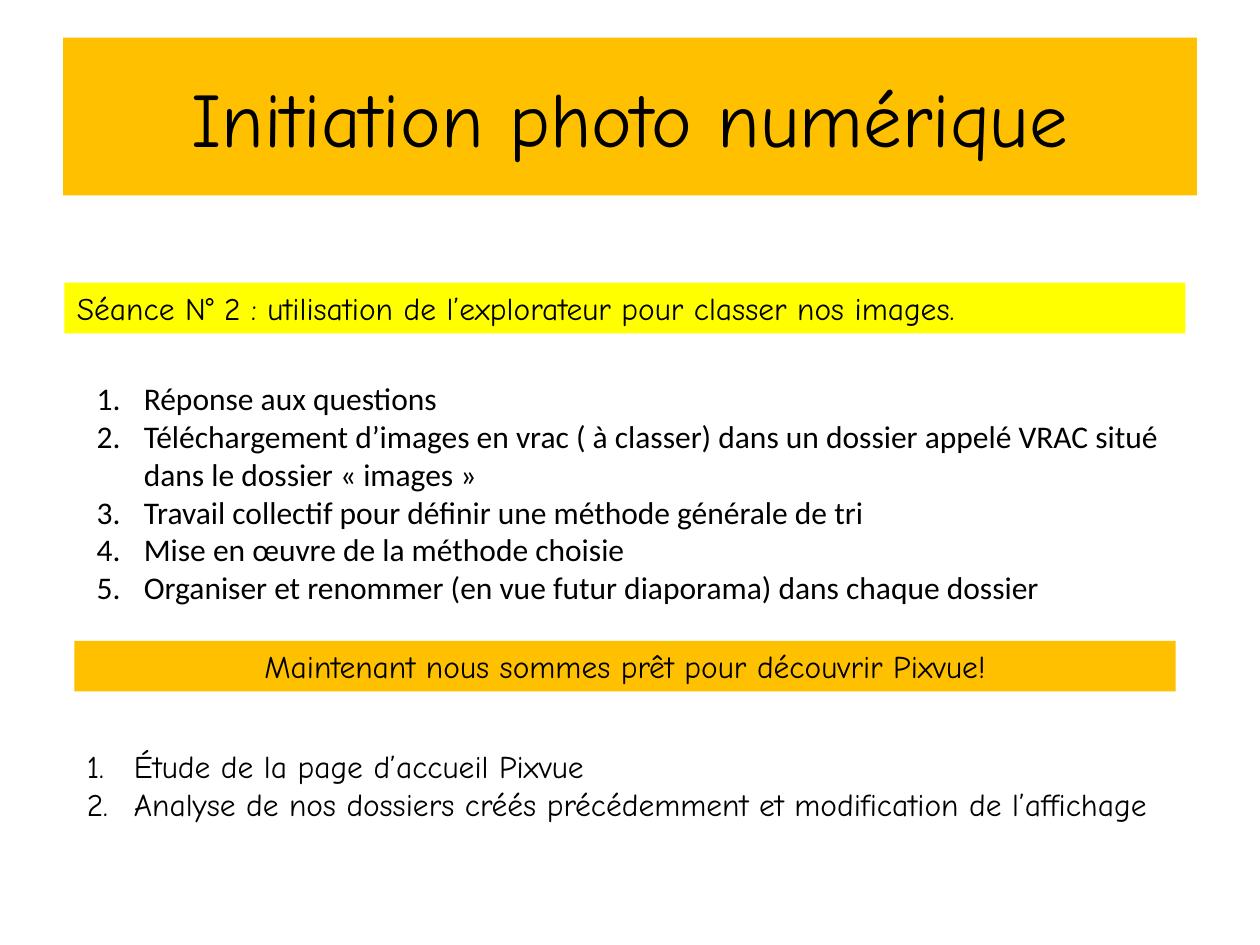
from lxml.etree import SubElement
from pptx import Presentation
from pptx.dml.color import RGBColor
from pptx.enum.shapes import MSO_SHAPE
from pptx.enum.text import MSO_ANCHOR, MSO_AUTO_SIZE, PP_ALIGN
from pptx.oxml.ns import qn
from pptx.util import Cm, Pt

TITLE = "Initiation photo numérique"
COMIC, PLAIN = "Comic Neue", "Calibri"
GOLD, YELLOW, BLACK = "FFC000", "FFFF00", "000000"
LEFT, MID = PP_ALIGN.LEFT, PP_ALIGN.CENTER
INDENT = 0.95

BANDS = [
    ("Séance N° 2 : utilisation de l’explorateur pour classer nos images.",
     (1.3, 5.7, 22.6, 1.02), YELLOW, LEFT),
    ("Maintenant nous sommes prêt pour découvrir Pixvue!",
     (1.5, 12.92, 22.2, 1.02), GOLD, MID),
]
LISTS = [
    (["Réponse aux questions",
      "Téléchargement d’images en vrac ( à classer) dans un dossier appelé VRAC "
      "situé dans le dossier « images »",
      "Travail collectif pour définir une méthode générale de tri",
      "Mise en œuvre de la méthode choisie",
      "Organiser et renommer (en vue futur diaporama) dans chaque dossier"],
     (1.7, 7.52, 22.2, 5.64), PLAIN),
    (["Étude de la page d’accueil Pixvue",
      "Analyse de nos dossiers créés précédemment et modification de l’affichage"],
     (1.5, 14.94, 22, 3.33), COMIC),
]


def color(code):
    return RGBColor.from_string(code)


def apply(item, style):
    for name, value in style.items():
        setattr(item, name, value)


def place(shape, box):
    apply(shape, dict(zip(("left", "top", "width", "height"), map(Cm, box))))


def paint(shape, code):
    shape.fill.solid()
    shape.fill.fore_color.rgb = color(code)
    shape.line.fill.background()


def write(shape, lines, font, size=18, align=LEFT, anchor=MSO_ANCHOR.TOP):
    frame = shape.text_frame
    frame.text = "\n".join(lines)
    apply(frame, {"word_wrap": True, "auto_size": MSO_AUTO_SIZE.NONE,
                  "vertical_anchor": anchor})
    for para in frame.paragraphs:
        para.alignment = align
        apply(para.font, {"name": font, "size": Pt(size)})
        para.font.color.rgb = color(BLACK)


def number(shape):
    for para in shape.text_frame.paragraphs:
        props = para._p.get_or_add_pPr()
        props.set("marL", str(Cm(INDENT)))
        props.set("indent", str(-Cm(INDENT)))
        SubElement(props, qn("a:buFont"), typeface="+mj-lt")
        SubElement(props, qn("a:buAutoNum"), type="arabicPeriod")


def main():
    """Build the session slide: title, two bands and two numbered lists."""
    deck = Presentation()
    apply(deck, {"slide_width": Cm(25.4), "slide_height": Cm(19.05)})
    slide = deck.slides.add_slide(deck.slide_layouts[5])
    shapes = slide.shapes

    title = shapes.title
    place(title, (1.27, 0.76, 22.86, 3.18))
    paint(title, GOLD)
    write(title, [TITLE], COMIC, 44, MID, MSO_ANCHOR.MIDDLE)

    for text, box, fill, align in BANDS:
        band = shapes.add_shape(MSO_SHAPE.RECTANGLE, *map(Cm, box))
        band.shadow.inherit = False
        paint(band, fill)
        write(band, [text], COMIC, align=align)

    for items, box, font in LISTS:
        area = shapes.add_textbox(*map(Cm, box))
        write(area, items, font)
        number(area)

    deck.save("out.pptx")


if __name__ == "__main__":
    main()
